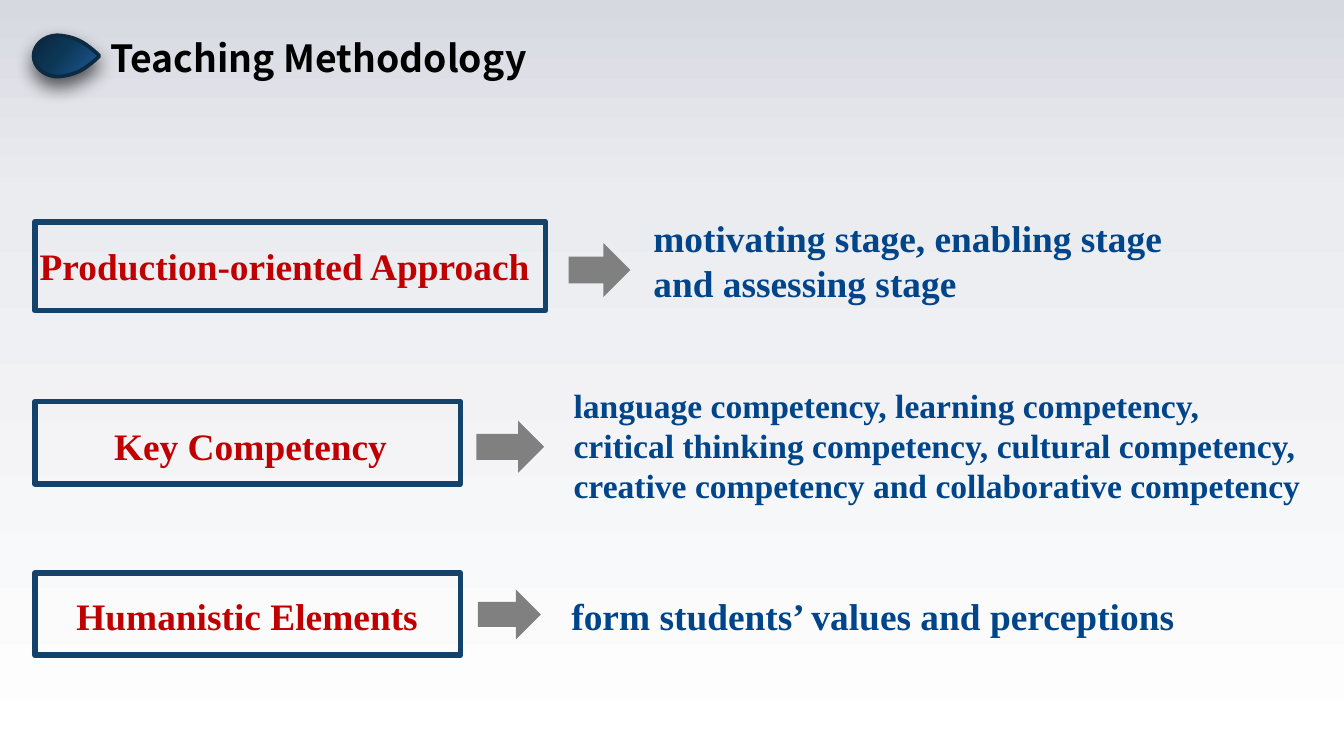
from lxml import etree
from pptx import Presentation
from pptx.dml.color import RGBColor
from pptx.enum import shapes, text
from pptx.oxml import parse_xml
from pptx.oxml.ns import nsdecls, qn
from pptx.util import Pt

# Content: label, detail lines, and boxes as left, top, width, height in points
TITLE = "Teaching Methodology"
ROWS = [
    dict(label="Production-oriented Approach", lbox=(14.2, 126.7, 316, 31.7),
         frame=(18.7, 118.8, 273.6, 47.5), arrow=(304.6, 130.3, 33.1, 28.8),
         lines=["motivating stage, enabling stage", "and assessing stage"],
         dbox=(342.9, 111.6, 288.7, 55.4), size="text"),
    dict(label="Key Competency", lbox=(54, 223.4, 188.6, 31.7),
         frame=(18.7, 215.2, 228, 44), arrow=(255.2, 225.4, 36.3, 28),
         lines=["language competency, learning competency, critical thinking "
                "competency, cultural competency, creative competency and "
                "collaborative competency"],
         dbox=(300.2, 202.5, 406, 72.7), size="small"),
    dict(label="Humanistic Elements", lbox=(33.8, 314.2, 231.8, 31.7),
         frame=(18.7, 307.1, 228, 44), arrow=(256, 315.8, 33.8, 26.8),
         lines=["form students’ values and perceptions"],
         dbox=(275.2, 314.2, 386, 31.7), size="text", indent=23.8),
]

# Drop outline: start point, then curves as two handles and an end point
AXIS = 30
START = (18, AXIS)
UPPER = [((18, 24.3), (23.2, 19.3), (30.5, 18.9)),
         ((37, 19.3), (42.5, 21), (47.5, 25)),
         ((50.2, 27), (51.8, 28.5), (53.2, AXIS))]

THEME = dict(
    head="Noto Sans CJK SC", body="Times New Roman",
    title=20, text=20, small=18,
    ink="000000", label="C00000", detail="00458A",
    frame="13436C", arrow="808080", rim="0C2A42",
    back=[(0, "D7D9E1"), (26, "EBECF0"), (100, "FFFFFF")],
    drop=[(12, "1D528B"), (59, "0B3754"), (100, "0D243F")],
)


def rgb(name):
    return RGBColor.from_string(THEME[name])


def blend(fill, stops, angle):
    """Make a linear gradient; the angle runs clockwise."""
    fill.gradient()
    fill.gradient_angle = 360 - angle
    grad = fill._fill._gradFill
    old = grad.find(qn("a:gsLst"))
    marks = "".join(
        f'<a:gs pos="{pos * 1000}"><a:srgbClr val="{hue}"/></a:gs>'
        for pos, hue in stops)
    grad.replace(old, parse_xml(f'<a:gsLst {nsdecls("a")}>{marks}</a:gsLst>'))


def write(box, lines, font, size, hue, indent=0):
    frame = box.text_frame
    frame.word_wrap = True
    frame.auto_size = text.MSO_AUTO_SIZE.SHAPE_TO_FIT_TEXT
    frame.vertical_anchor = text.MSO_ANCHOR.TOP
    frame.text = "\n".join(lines)
    for par in frame.paragraphs:
        par.alignment = text.PP_ALIGN.JUSTIFY if indent else text.PP_ALIGN.LEFT
        par.line_spacing = 1
        par.space_before = Pt(0)
        if indent:
            par._p.get_or_add_pPr().set("indent", str(Pt(indent)))
        par.font.name = THEME[font]
        par.font.size = Pt(THEME[size])
        par.font.bold = True
        par.font.color.rgb = rgb(hue)


def outline(parts, start, curves):
    """Build a closed freeform, then bend its sides into cubic curves."""
    ends = [end for _, _, end in curves]
    pen = parts.build_freeform(*start, scale=Pt(1))
    pen.add_line_segments(ends, close=True)
    shape = pen.convert_to_shape()
    trace = shape._element.find(".//" + qn("a:path"))
    trace.set("w", str(shape.width))
    trace.set("h", str(shape.height))

    def spot(parent, point):
        x, y = map(Pt, point)
        etree.SubElement(parent, qn("a:pt"), x=str(x - shape.left),
                         y=str(y - shape.top))

    for old in list(trace):
        trace.remove(old)
    spot(etree.SubElement(trace, qn("a:moveTo")), start)
    for curve in curves:
        bend = etree.SubElement(trace, qn("a:cubicBezTo"))
        for point in curve:
            spot(bend, point)
    etree.SubElement(trace, qn("a:close"))
    return shape


deck = Presentation()
deck.slide_width, deck.slide_height = Pt(720), Pt(405)
slide = deck.slides.add_slide(deck.slide_layouts[5])
parts = slide.shapes
blend(slide.background.fill, THEME["back"], 90)

# Title
title = parts.title
title.left, title.top, title.width, title.height = map(Pt, (54, 16.4, 276.5, 29.5))
write(title, [TITLE], "head", "title", "ink")
pad = title.text_frame
pad.margin_left = pad.margin_right = Pt(5)
pad.margin_top = pad.margin_bottom = Pt(2.6)

# Drop beside the title: lower half mirrors the upper one
route = [START] + [point for curve in UPPER for point in curve]
back = [(x, 2 * AXIS - y) for x, y in reversed(route)][1:]
lower = [tuple(back[i:i + 3]) for i in range(0, len(back), 3)]
drop = outline(parts, START, UPPER + lower)
blend(drop.fill, THEME["drop"], 220)
drop.line.color.rgb = rgb("rim")
drop.line.width = Pt(2)
drop._element.spPr.append(parse_xml(
    f'<a:effectLst {nsdecls("a")}><a:outerShdw blurRad="{Pt(10)}" '
    f'dist="{Pt(5)}" dir="5400000" algn="t" rotWithShape="0">'
    '<a:srgbClr val="000000"><a:alpha val="63000"/></a:srgbClr>'
    '</a:outerShdw></a:effectLst>'))

# Rows: framed label, arrow, detail
for row in ROWS:
    frame = parts.add_shape(shapes.MSO_SHAPE.RECTANGLE, *map(Pt, row["frame"]))
    frame.shadow.inherit = False
    frame.fill.background()
    frame.line.color.rgb = rgb("frame")
    frame.line.width = Pt(3)
    etree.SubElement(frame.line._get_or_add_ln(), qn("a:round"))

    arrow = parts.add_shape(shapes.MSO_SHAPE.RIGHT_ARROW, *map(Pt, row["arrow"]))
    arrow.shadow.inherit = False
    arrow.fill.solid()
    arrow.fill.fore_color.rgb = rgb("arrow")
    arrow.line.fill.background()

    label = parts.add_textbox(*map(Pt, row["lbox"]))
    write(label, [row["label"]], "body", "text", "label")
    detail = parts.add_textbox(*map(Pt, row["dbox"]))
    write(detail, row["lines"], "body", row["size"], "detail",
          row.get("indent", 0))

deck.save("out.pptx")
